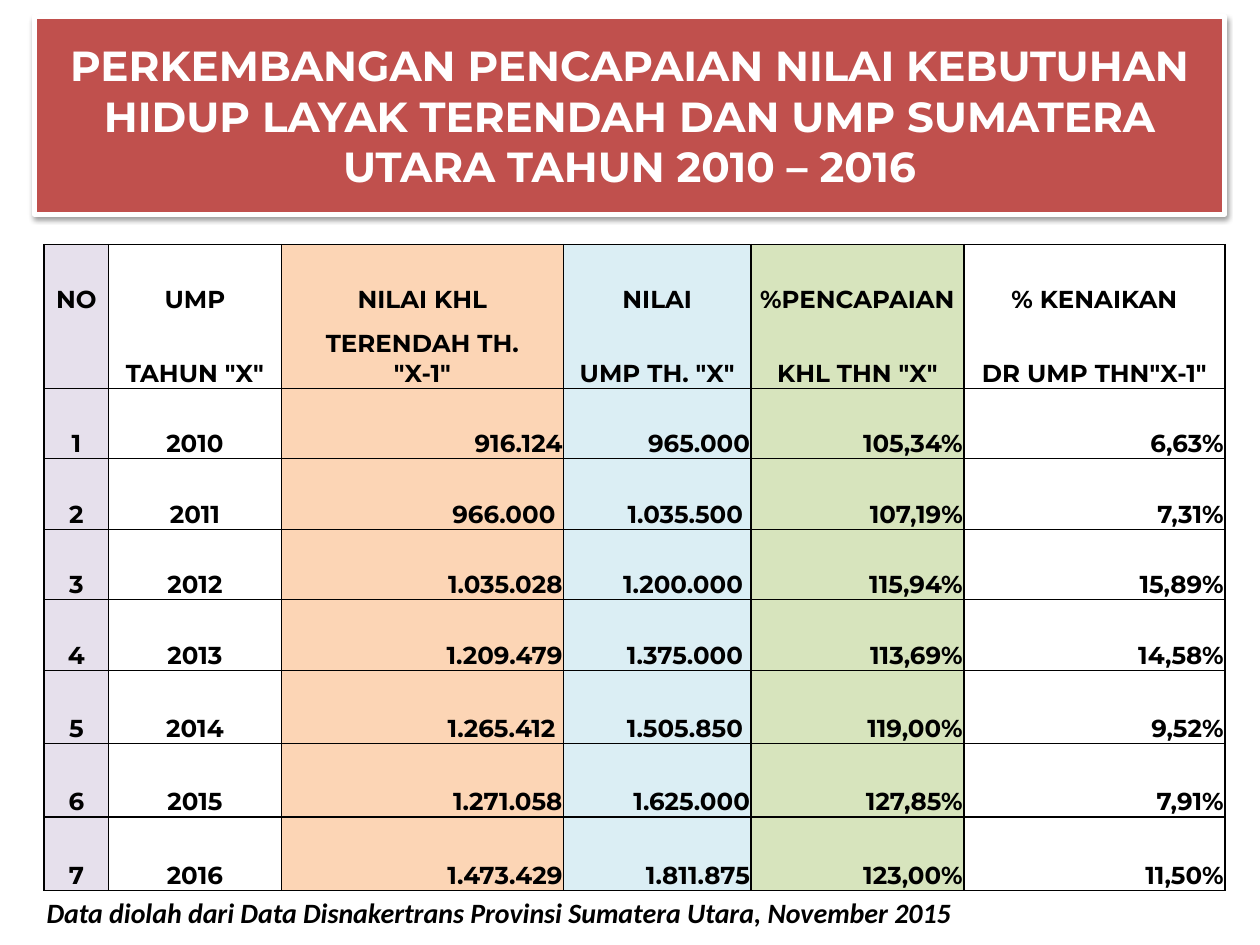
"""Build a slide on minimum living needs and provincial wages, 2010 to 2016."""
from lxml.etree import SubElement
from pptx import Presentation
from pptx.dml.color import RGBColor
from pptx.enum.shapes import MSO_SHAPE
from pptx.enum.text import MSO_ANCHOR, PP_ALIGN
from pptx.oxml import parse_xml
from pptx.oxml.ns import nsdecls, qn
from pptx.util import Cm, Pt


def paint(fill, color):
    fill.solid()
    fill.fore_color.rgb = RGBColor.from_string(color)


def write(frame, text, size=14, font="Montserrat", color="000000", align=PP_ALIGN.CENTER, italic=False):
    frame.word_wrap = True
    for index, line in enumerate(text.split("\n")):
        para = frame.paragraphs[0] if index == 0 else frame.add_paragraph()
        para.alignment = align
        span = para.add_run()
        span.text = line
        span.font.size = Pt(size)
        span.font.name = font
        span.font.bold = True
        span.font.italic = italic
        paint(span.font.fill, color)


deck = Presentation()
deck.slide_width, deck.slide_height = Cm(25.4), Cm(19.05)
page = deck.slides.add_slide(deck.slide_layouts[6])

banner = page.shapes.add_shape(MSO_SHAPE.RECTANGLE, Cm(0.69), Cm(0.33), Cm(24), Cm(3.99))
paint(banner.fill, "C0504D")
paint(banner.line.fill, "FFFFFF")
banner.line.width = Pt(3)
banner._element.spPr.append(parse_xml(
    f'<a:effectLst {nsdecls("a")}><a:outerShdw blurRad="{Pt(3.1)}" dist="{Pt(1.6)}" dir="5400000" rotWithShape="0">'
    '<a:srgbClr val="000000"><a:alpha val="38000"/></a:srgbClr></a:outerShdw></a:effectLst>'))
banner.text_frame.vertical_anchor = MSO_ANCHOR.MIDDLE
write(banner.text_frame,
      "PERKEMBANGAN PENCAPAIAN NILAI KEBUTUHAN HIDUP LAYAK TERENDAH DAN UMP SUMATERA UTARA TAHUN 2010 – 2016",
      size=24, color="FFFFFF")

rows = [
    ("NO", "UMP", "NILAI KHL", "NILAI", "%PENCAPAIAN", "% KENAIKAN"),
    ("", 'TAHUN "X"', 'TERENDAH TH.\n"X-1"', 'UMP TH. "X"', 'KHL THN "X"', 'DR UMP THN"X-1"'),
    ("1", "2010", "916.124", "965.000", "105,34%", "6,63%"),
    ("2", "2011", "966.000 ", "1.035.500 ", "107,19%", "7,31%"),
    ("3", "2012", "1.035.028", "1.200.000 ", "115,94%", "15,89%"),
    ("4", "2013", "1.209.479", "1.375.000 ", "113,69%", "14,58%"),
    ("5", "2014", "1.265.412 ", "1.505.850 ", "119,00%", "9,52%"),
    ("6", "2015", "1.271.058", "1.625.000", "127,85%", "7,91%"),
    ("7", "2016", "1.473.429", "1.811.875", "123,00%", "11,50%"),
]
column_widths = [1.3, 3.48, 5.69, 3.78, 4.29, 5.26]
column_fills = ["E6E0EC", "FFFFFF", "FCD5B5", "DBEEF4", "D7E4BD", "FFFFFF"]
row_heights = [1.42, 1.48] + [1.42] * 4 + [1.48] * 3
rule_widths = [1, 0, 1, 0.5, 0.5, 0.5, 0.5, 1, 1, 1]

table = page.shapes.add_table(len(rows), len(column_widths), Cm(0.89), Cm(4.93),
                              Cm(sum(column_widths)), Cm(sum(row_heights))).table
table.first_row = table.horz_banding = False
for column, width in zip(table.columns, column_widths):
    column.width = Cm(width)

for row_index, texts in enumerate(rows):
    table.rows[row_index].height = Cm(row_heights[row_index])
    for column_index, text in enumerate(texts):
        cell = table.cell(row_index, column_index)
        cell.margin_left = cell.margin_right = cell.margin_top = Cm(0.02)
        cell.margin_bottom = 0
        cell.vertical_anchor = MSO_ANCHOR.BOTTOM
        borders = {"L": 1, "R": 1, "T": rule_widths[row_index], "B": rule_widths[row_index + 1]}
        for side, width in borders.items():
            line = SubElement(cell._tc.get_or_add_tcPr(), qn(f"a:ln{side}"), w=str(Pt(width)))
            if width:
                SubElement(SubElement(line, qn("a:solidFill")), qn("a:srgbClr"), val="000000")
            else:
                SubElement(line, qn("a:noFill"))
        paint(cell.fill, column_fills[column_index])
        if text:
            is_number = row_index > 1 and column_index > 1
            write(cell.text_frame, text, align=PP_ALIGN.RIGHT if is_number else PP_ALIGN.CENTER)

box = page.shapes.add_textbox(Cm(0.69), Cm(17.93), Cm(23.39), Cm(0.94))
write(box.text_frame, "Data diolah dari Data Disnakertrans Provinsi Sumatera Utara, November 2015",
      size=16, font="Calibri", align=PP_ALIGN.LEFT, italic=True)

deck.save("out.pptx")
